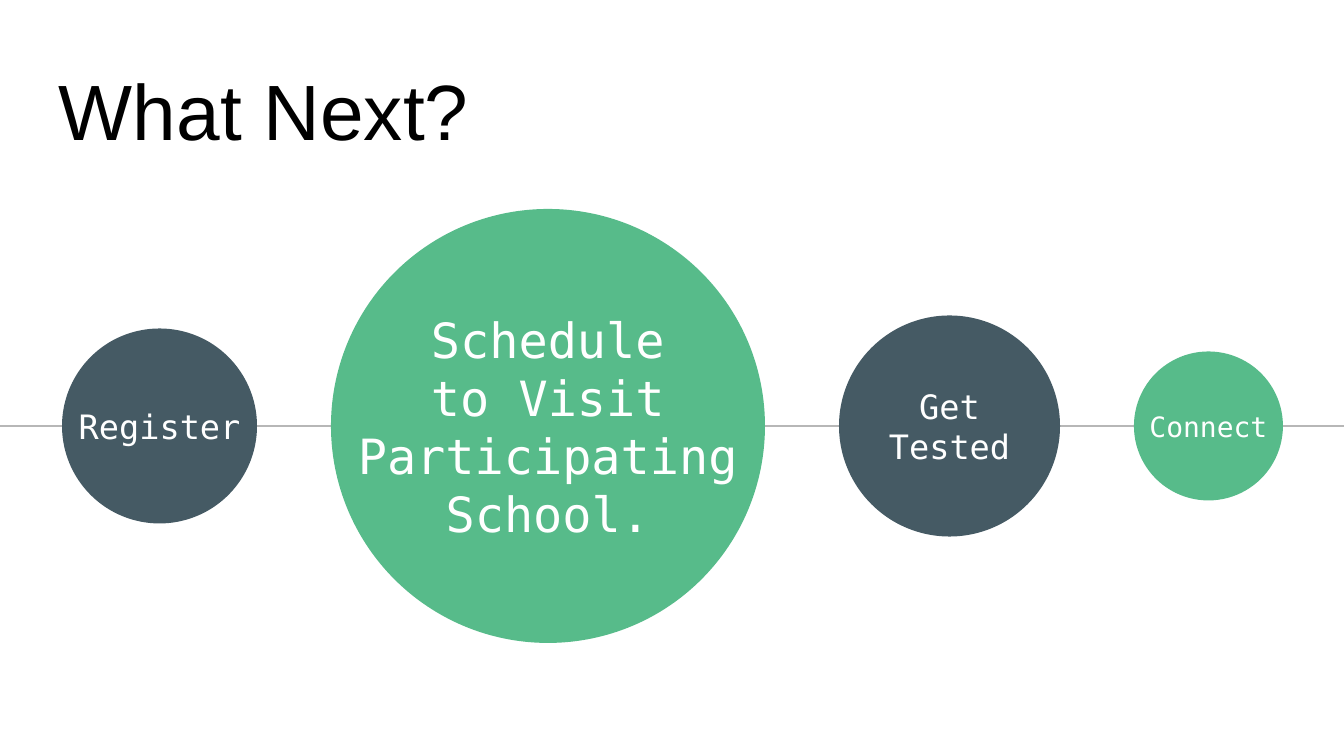
import pptx
import pptx.dml.color
import pptx.enum.shapes
import pptx.enum.text
import pptx.oxml.ns
import pptx.util
from lxml import etree

EMU_PER_PX = 914400 / 134.4
SLIDE_WIDTH, SLIDE_HEIGHT = 1344, 756
INSET = 13
LABEL_HEIGHT = 89
CIRCLE_GAP = 74

SLATE, GREEN, GREY = "455A64", "57BB8A", "B7B7B7"
WHITE, BLACK = "FFFFFF", "000000"

# diameter, fill, font size, label lines
STEPS = [
    (195, SLATE, 18, ["Register"]),
    (434, GREEN, 26, ["Schedule", "to Visit", "Participating School."]),
    (221, SLATE, 18, ["Get Tested"]),
    (149, GREEN, 15, ["Connect"]),
]


def px(length):
    return pptx.util.Emu(round(length * EMU_PER_PX))


def color(hex_string):
    return pptx.dml.color.RGBColor.from_string(hex_string)


def add_text(slide, box, lines, font_name, size, hex_string, align, anchor):
    frame = slide.shapes.add_textbox(*map(px, box)).text_frame
    frame.word_wrap = True
    frame.vertical_anchor = anchor
    frame.margin_left = frame.margin_right = px(INSET)
    frame.margin_top = frame.margin_bottom = px(INSET)
    frame.text = "\n".join(lines)
    for paragraph in frame.paragraphs:
        paragraph.alignment = align
        paragraph.font.name = font_name
        paragraph.font.size = pptx.util.Pt(size)
        paragraph.font.color.rgb = color(hex_string)


def add_title(slide, box, title):
    add_text(slide, box, [title], "Arial", 42, BLACK,
             pptx.enum.text.PP_ALIGN.LEFT, pptx.enum.text.MSO_ANCHOR.BOTTOM)


def add_step(slide, left, middle, diameter, fill, size, lines):
    """Draw one circle centred on the height middle, with its label."""
    circle = slide.shapes.add_shape(
        pptx.enum.shapes.MSO_SHAPE.OVAL,
        px(left), px(middle - diameter / 2), px(diameter), px(diameter))
    circle.shadow.inherit = False
    circle.fill.solid()
    circle.fill.fore_color.rgb = color(fill)
    circle.line.fill.background()
    label_box = (left, middle - LABEL_HEIGHT / 2, diameter, LABEL_HEIGHT)
    add_text(slide, label_box, lines, "DejaVu Sans Mono", size, WHITE,
             pptx.enum.text.PP_ALIGN.CENTER, pptx.enum.text.MSO_ANCHOR.MIDDLE)


def add_timeline(slide, box, indent):
    """Draw a line across the middle of the box and the steps along it."""
    left, top, width, height = box
    middle = top + height / 2
    line = slide.shapes.add_connector(
        pptx.enum.shapes.MSO_CONNECTOR.STRAIGHT,
        px(left), px(middle), px(left + width), px(middle))
    line.line.color.rgb = color(GREY)
    line.line.width = pptx.util.Pt(1.5)
    etree.SubElement(line._element.spPr, pptx.oxml.ns.qn("a:effectLst"))

    step_left = left + indent
    for diameter, fill, size, lines in STEPS:
        add_step(slide, step_left, middle, diameter, fill, size, lines)
        step_left += diameter + CIRCLE_GAP


def main():
    presentation = pptx.Presentation()
    presentation.slide_width = px(SLIDE_WIDTH)
    presentation.slide_height = px(SLIDE_HEIGHT)
    slide = presentation.slides.add_slide(presentation.slide_layouts[6])
    add_timeline(slide, (0, 209, SLIDE_WIDTH, 434), 62)
    add_title(slide, (46, 47, 1252, 122), "What Next?")
    presentation.save("out.pptx")


if __name__ == "__main__":
    main()
